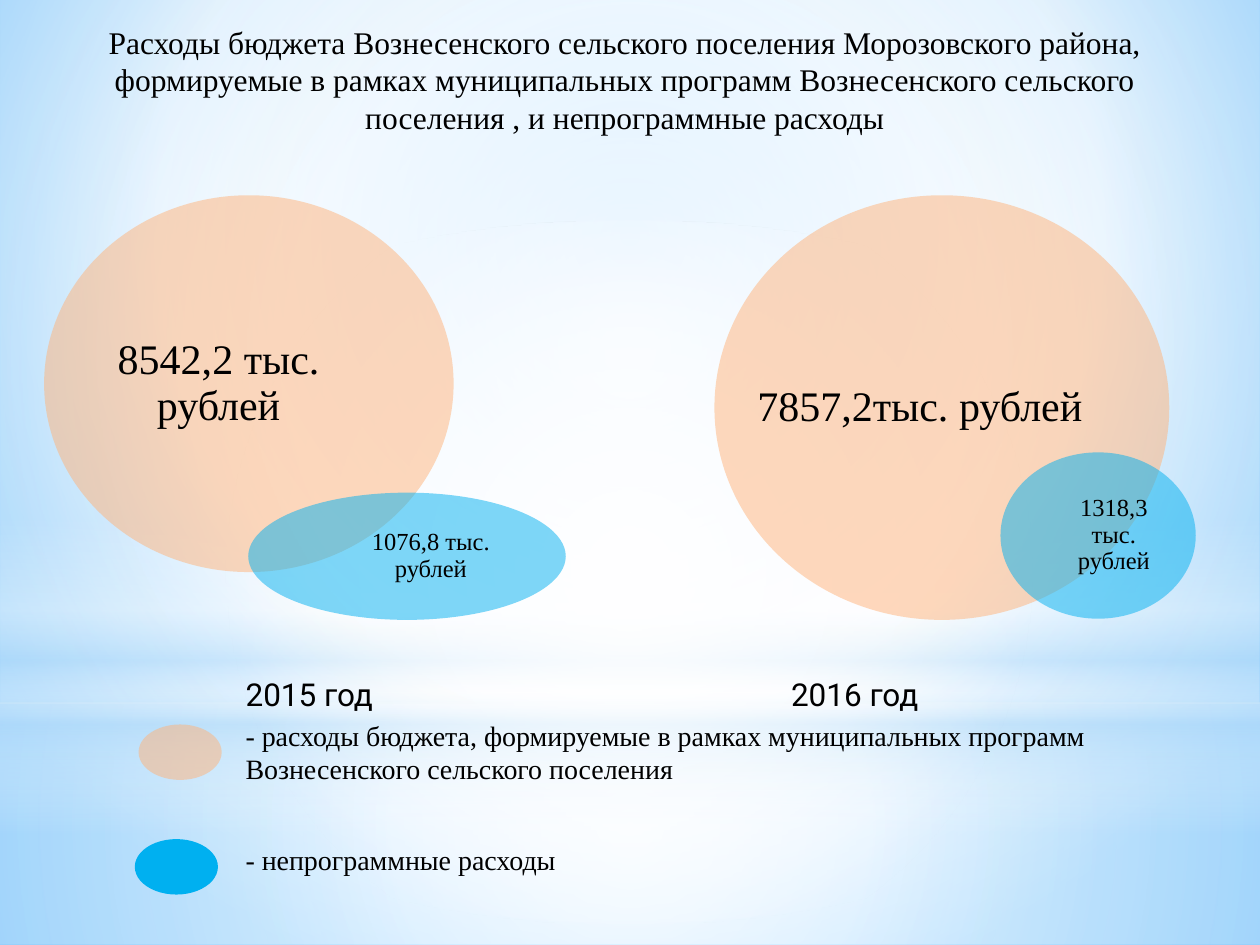
from lxml.etree import SubElement
from pptx import Presentation
from pptx.dml.color import RGBColor
from pptx.enum.shapes import MSO_SHAPE
from pptx.enum.text import MSO_ANCHOR, MSO_AUTO_SIZE, PP_ALIGN
from pptx.oxml.ns import qn
from pptx.util import Inches, Pt

COLORS = {
    "text": "000000", "program": "FFB37A", "other": "00B0F0",
    "white": "FFFFFF", "mist": "B4DCFA", "sky": "9ED5FF", "edge": "5BB9FF",
}
SERIF = "Times New Roman"
CENTER = (50, 50, 50, 50)


def place(shape, box):
    shape.left, shape.top, shape.width, shape.height = map(Inches, box)


def add_alpha(color_element, percent):
    SubElement(color_element, qn("a:alpha"), val=str(percent * 1000))


def paint_gradient(holder, stops, focus=None):
    gradient = holder.makeelement(qn("a:gradFill"), rotWithShape="1")
    stop_list = SubElement(gradient, qn("a:gsLst"))
    for position, color, opacity in stops:
        stop = SubElement(stop_list, qn("a:gs"), pos=str(position * 1000))
        tint = SubElement(stop, qn("a:srgbClr"), val=COLORS[color])
        add_alpha(tint, opacity)
    if focus:
        path = SubElement(gradient, qn("a:path"), path="circle")
        edges = {side: str(value * 1000) for side, value in zip("ltrb", focus)}
        SubElement(path, qn("a:fillToRect"), **edges)
    else:
        SubElement(gradient, qn("a:lin"), ang="5400000", scaled="0")
    holder.replace(holder.find(qn("a:solidFill")), gradient)


def add_figure(slide, kind, box, color, opacity=100):
    figure = slide.shapes.add_shape(kind, *map(Inches, box))
    figure.shadow.inherit = False
    figure.line.fill.background()
    figure.fill.solid()
    figure.fill.fore_color.rgb = RGBColor.from_string(COLORS[color])
    if opacity < 100:
        solid = figure.element.spPr.find(qn("a:solidFill"))
        add_alpha(solid[0], opacity)
    return figure


def write(frame, text, size, font=SERIF, align=PP_ALIGN.LEFT):
    frame.word_wrap = True
    frame.text = text
    paragraph = frame.paragraphs[0]
    paragraph.alignment = align
    for run in paragraph.runs:
        run.font.size = Pt(size)
        run.font.name = font
        run.font.color.rgb = RGBColor.from_string(COLORS["text"])
    return paragraph


def add_text(slide, box, text, size, font=SERIF, align=PP_ALIGN.LEFT):
    frame = slide.shapes.add_textbox(*map(Inches, box)).text_frame
    write(frame, text, size, font, align)
    return frame


def draw_backdrop(slide, box):
    left, top, width, height = box
    slide.background.fill.solid()
    paint_gradient(
        slide.element.find(".//" + qn("p:bgPr")),
        [(0, "sky", 100), (60, "white", 100), (100, "edge", 100)],
        (20, 10, 20, 60),
    )
    horizon = 5.58
    layers = [
        (MSO_SHAPE.RECTANGLE, horizon, height - horizon, CENTER,
         [(0, "white", 91), (37, "white", 76), (100, "mist", 79)]),
        (MSO_SHAPE.RECTANGLE, 0, horizon, CENTER,
         [(0, "white", 89), (48, "white", 62), (100, "mist", 79)]),
        (MSO_SHAPE.RECTANGLE, 4.12, 2.5, None,
         [(0, "white", 0), (29, "white", 30), (45, "mist", 40),
          (55, "white", 26), (65, "mist", 60), (100, "white", 0)]),
        (MSO_SHAPE.OVAL, 1.75, 5.58, CENTER,
         [(0, "white", 100), (56, "white", 0)]),
    ]
    for kind, offset, depth, focus, stops in layers:
        layer = add_figure(slide, kind, (left, top + offset, width, depth), "white")
        paint_gradient(layer.element.spPr, stops, focus)


def draw_title(slide, box, text):
    title = slide.shapes.title
    slide.shapes.element.append(title.element)
    place(title, box)
    title.text_frame.auto_size = MSO_AUTO_SIZE.NONE
    title.text_frame.vertical_anchor = MSO_ANCHOR.TOP
    write(title.text_frame, text, 18, align=PP_ALIGN.CENTER)


def draw_year(slide, box, circles):
    left, top = box[:2]
    for (x, y, width, height), color, label_box, amount, size in circles:
        circle_box = (left + x, top + y, width, height)
        add_figure(slide, MSO_SHAPE.OVAL, circle_box, color, 50)
        label_x, label_y, label_width, label_height = label_box
        frame = add_text(
            slide, (left + label_x, top + label_y, label_width, label_height),
            amount, size, align=PP_ALIGN.CENTER,
        )
        frame.margin_left = frame.margin_right = 0
        frame.margin_top = frame.margin_bottom = 0
        frame.vertical_anchor = MSO_ANCHOR.MIDDLE
        frame.paragraphs[0].line_spacing = 0.9


def draw_legend(slide, box, entries):
    left, top, width, _ = box
    for x, y, color, opacity, text_y, text_height, text in entries:
        marker_box = (left + x, top + y, 0.66, 0.44)
        add_figure(slide, MSO_SHAPE.OVAL, marker_box, color, opacity)
        text_box = (left + 0.78, top + text_y, width - 0.78, text_height)
        add_text(slide, text_box, text, 16)


def main():
    presentation = Presentation()
    presentation.slide_width = Inches(10)
    presentation.slide_height = Inches(7.5)
    slide = presentation.slides.add_slide(presentation.slide_layouts[5])
    draw_backdrop(slide, (0, 0, 10, 7.5))
    draw_title(
        slide, (0.43, 0.13, 9.06, 1.01),
        "Расходы бюджета Вознесенского сельского поселения Морозовского района, "
        "формируемые в рамках муниципальных программ Вознесенского сельского "
        "поселения , и непрограммные расходы",
    )
    draw_year(slide, (5.67, 1.55, 3.82, 3.37), [
        ((0, 0, 3.61, 3.37), "program", (0.34, 0.3, 2.58, 2.77),
         "7857,2тыс. рублей", 24),
        ((2.27, 2.04, 1.55, 1.32), "other", (2.76, 2.22, 0.82, 0.96),
         "1318,3 тыс. рублей", 14),
    ])
    draw_year(slide, (0.35, 1.55, 4.14, 3.37), [
        ((0, 0, 3.25, 2.99), "program", (0.45, 0.35, 1.87, 2.29),
         "8542,2 тыс. рублей", 24),
        ((1.62, 2.36, 2.52, 1.01), "other", (2.34, 2.48, 1.46, 0.77),
         "1076,8 тыс. рублей", 14),
    ])
    draw_legend(slide, (1.07, 5.65, 8.5, 1.45), [
        (0.03, 0.1, "program", 50, 0, 0.64,
         "- расходы бюджета, формируемые в рамках муниципальных программ "
         "Вознесенского сельского поселения"),
        (0, 1.01, "other", 100, 0.99, 0.37, "- непрограммные расходы"),
    ])
    add_text(slide, (1.17, 5.31, 2.57, 0.4), "2015 год", 18, "Roboto", PP_ALIGN.CENTER)
    add_text(slide, (6.18, 5.31, 3.27, 0.4), "2016 год", 18, "Roboto")
    presentation.save("out.pptx")


if __name__ == "__main__":
    main()
